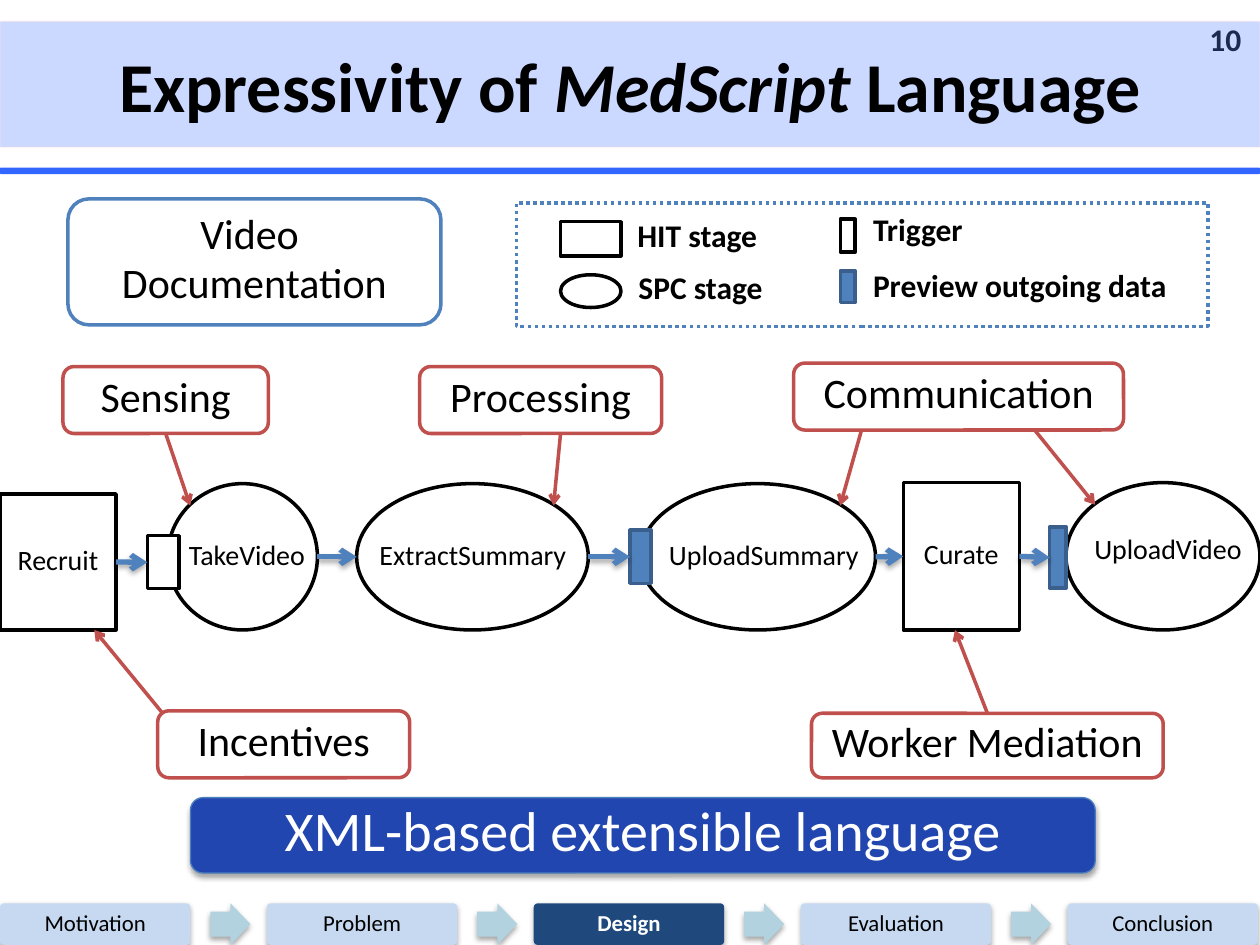
from dataclasses import dataclass
from typing import NamedTuple, Optional, Union

from lxml import etree
from pptx import Presentation
from pptx import util as u
from pptx.dml.color import RGBColor
from pptx.enum import dml, shapes, text
from pptx.oxml import ns

Geo = shapes.MSO_SHAPE
Align = text.PP_ALIGN


@dataclass(frozen=True)
class Theme:
    font: str = "Calibri"
    black: str = "000000"
    white: str = "FFFFFF"
    number: str = "161616"
    rule: str = "3366FF"
    title_edge: str = "FFE4E5"
    blue: str = "4F81BD"
    blue_edge: str = "3A5F8C"
    red: str = "C0504D"
    banner: str = "2246B0"
    banner_edge: str = "4B7EBC"
    step: str = "C6D9F1"
    step_active: str = "1F497D"
    step_arrow: str = "B2D2DF"
    title_pt: int = 40
    banner_pt: int = 32
    callout_pt: int = 24
    legend_pt: int = 18
    stage_pt: int = 16
    step_pt: int = 13


class Box(NamedTuple):
    x: float
    y: float
    w: float
    h: float


class Run(NamedTuple):
    text: str
    bold: bool = False
    italic: bool = False


class Stage(NamedTuple):
    name: str
    geo: Geo
    box: Box
    label: Optional[Box] = None


class Side(NamedTuple):
    name: str
    index: int


class Rim(NamedTuple):
    name: str
    fx: float
    fy: float


class Point(NamedTuple):
    x: float
    y: float


End = Union[Side, Rim, Point]


class Link(NamedTuple):
    start: End
    end: End


T = Theme()
STAGES = [
    Stage("Recruit", Geo.RECTANGLE, Box(0, 9.96, 2.34, 2.74)),
    Stage("Curate", Geo.RECTANGLE, Box(18.21, 9.73, 2.34, 2.97)),
    Stage("TakeVideo", Geo.OVAL, Box(3.38, 9.75, 3.02, 2.95), Box(3.38, 10.74, 3.2, 0.99)),
    Stage("ExtractSummary", Geo.OVAL, Box(7.19, 9.75, 4.67, 2.95), Box(6.98, 10.74, 5.11, 0.99)),
    Stage("UploadSummary", Geo.OVAL, Box(12.9, 9.75, 4.75, 2.95), Box(12.9, 10.74, 5, 0.99)),
    Stage("UploadVideo", Geo.OVAL, Box(21.49, 9.73, 3.91, 2.97), Box(21.49, 10.62, 4.11, 0.99)),
]
CALLOUTS = {
    "Sensing": Box(1.27, 7.39, 4.14, 1.35),
    "Processing": Box(8.46, 7.39, 4.88, 1.35),
    "Communication": Box(16, 7.32, 6.65, 1.35),
    "Incentives": Box(3.18, 14.33, 5.08, 1.35),
    "Worker Mediation": Box(16.36, 14.38, 7.09, 1.3),
}
GATES = {
    "take trigger": (Box(2.97, 10.8, 0.64, 1.07), T.white, T.black),
    "summary preview": (Box(12.7, 10.69, 0.43, 1.07), T.blue, T.blue_edge),
    "video preview": (Box(21.16, 10.62, 0.33, 1.24), T.blue, T.blue_edge),
}
FLOW = [
    Link(Side("Recruit", 3), Side("take trigger", 1)),
    Link(Rim("TakeVideo", 1, 0.5), Rim("ExtractSummary", 0, 0.5)),
    Link(Rim("ExtractSummary", 1, 0.5), Side("summary preview", 1)),
    Link(Rim("UploadSummary", 1, 0.5), Side("Curate", 1)),
    Link(Side("Curate", 3), Side("video preview", 1)),
]
POINTERS = [
    Link(Side("Sensing", 2), Rim("TakeVideo", 0.15, 0.15)),
    Link(Point(11.3, 8.74), Rim("ExtractSummary", 0.85, 0.15)),
    Link(Point(17.37, 8.66), Rim("UploadSummary", 0.85, 0.15)),
    Link(Point(20.85, 8.66), Rim("UploadVideo", 0.15, 0.15)),
    Link(Point(3.28, 14.38), Point(1.9, 12.7)),
    Link(Side("Worker Mediation", 0), Point(19.25, 12.7)),
]
LEGEND = [
    ("HIT stage", Geo.RECTANGLE, Box(11.3, 4.47, 1.22, 0.69), T.white, T.black, Box(12.6, 4.45, 3.07, 0.71)),
    ("SPC stage", Geo.OVAL, Box(11.3, 5.54, 1.22, 0.66), T.white, T.black, Box(12.62, 5.51, 3.05, 0.71)),
    ("Trigger", Geo.RECTANGLE, Box(16.94, 4.42, 0.3, 0.66), T.white, T.black, Box(17.35, 4.34, 2.79, 0.71)),
    ("Preview outgoing data", Geo.RECTANGLE, Box(16.94, 5.46, 0.3, 0.64), T.blue, T.blue_edge,
     Box(17.35, 5.49, 7.29, 0.66)),
]
STEPS = ["Motivation", "Problem", "Design", "Evaluation", "Conclusion"]
STEP_PITCH = 5.38


def rgb(color: str) -> RGBColor:
    return RGBColor.from_string(color)


def emu(box: Box) -> list:
    return [u.Cm(v) for v in box]


def set_alpha(parent, percent: int) -> None:
    clr = next(parent.iter(ns.qn("a:srgbClr")))
    etree.SubElement(clr, ns.qn("a:alpha"), val=str(percent * 1000))


def add_shadow(effects) -> None:
    outer = etree.SubElement(effects, ns.qn("a:outerShdw"), blurRad="40000", dist="23000",
                             dir="5400000", rotWithShape="0")
    etree.SubElement(outer, ns.qn("a:srgbClr"), val=T.black)
    set_alpha(outer, 35)


def write(sp, paragraphs: list, size: int, color: str = T.black, align=Align.CENTER,
          spacing: float = 0.8, before: float = 0.2) -> None:
    tf = sp.text_frame
    tf.word_wrap = True
    tf.vertical_anchor = text.MSO_ANCHOR.MIDDLE
    for i, runs in enumerate(paragraphs):
        p = tf.add_paragraph() if i else tf.paragraphs[0]
        p.alignment = align
        p.line_spacing = spacing
        p.space_before = u.Pt(size * before)
        for run in runs:
            r = p.add_run()
            r.text = run.text
            r.font.name, r.font.size = T.font, u.Pt(size)
            r.font.bold, r.font.italic = run.bold, run.italic
            r.font.color.rgb = rgb(color)


def add_shape(s, geo: Geo, box: Box, fill: str, line: Optional[str] = None,
              width: float = 2, shadow: bool = False):
    sp = s.shapes.add_shape(geo, *emu(box))
    sp.shadow.inherit = False
    sp.fill.solid()
    sp.fill.fore_color.rgb = rgb(fill)
    if line:
        sp.line.color.rgb = rgb(line)
        sp.line.width = u.Pt(width)
    else:
        sp.line.fill.background()
    if shadow:
        add_shadow(sp._element.spPr.find(ns.qn("a:effectLst")))
    return sp


def add_label(s, box: Box, run: Run, size: int, color: str = T.black, align=Align.CENTER) -> None:
    write(s.shapes.add_textbox(*emu(box)), [[run]], size, color, align)


def locate(end: End, nodes: dict) -> tuple:
    if isinstance(end, Point):
        return u.Cm(end.x), u.Cm(end.y)
    node = nodes[end.name]
    if isinstance(end, Rim):
        fx, fy = end.fx, end.fy
    else:
        fx, fy = [(0.5, 0), (0, 0.5), (0.5, 1), (1, 0.5)][end.index]
    return int(node.left + node.width * fx), int(node.top + node.height * fy)


def add_link(s, link: Link, nodes: dict, color: str, width: float, shadow: bool = False) -> None:
    c = s.shapes.add_connector(shapes.MSO_CONNECTOR.STRAIGHT, *locate(link.start, nodes),
                               *locate(link.end, nodes))
    for end, join in ((link.start, c.begin_connect), (link.end, c.end_connect)):
        if isinstance(end, Side):
            join(nodes[end.name], end.index)
    c.line.color.rgb = rgb(color)
    c.line.width = u.Pt(width)
    etree.SubElement(c.line._get_or_add_ln(), ns.qn("a:tailEnd"), type="arrow")
    effects = etree.SubElement(c._element.spPr, ns.qn("a:effectLst"))
    if shadow:
        add_shadow(effects)


def add_header(s) -> None:
    add_shape(s, Geo.ROUNDED_RECTANGLE, Box(0, 3.38, 25.4, 0.13), T.rule)
    add_label(s, Box(24.13, 0.43, 1.27, 0.84), Run("10", True), T.legend_pt, T.number, Align.LEFT)
    sp = add_shape(s, Geo.RECTANGLE, Box(0, 0.43, 25.4, 2.54), T.rule, T.title_edge, 1)
    set_alpha(sp._element.spPr.find(ns.qn("a:solidFill")), 25)
    set_alpha(sp._element.spPr.find(ns.qn("a:ln")), 30)
    write(sp, [[Run("Expressivity of ", True), Run("MedScript", True, True), Run(" Language", True)]],
          T.title_pt, spacing=1)


def add_legend(s) -> None:
    frame = add_shape(s, Geo.RECTANGLE, Box(10.41, 4.09, 13.94, 2.49), T.white, T.blue)
    frame.line.dash_style = dml.MSO_LINE.ROUND_DOT
    for name, geo, box, fill, line, label in LEGEND:
        add_shape(s, geo, box, fill, line)
        add_label(s, label, Run(name, True), T.legend_pt, align=Align.LEFT)


def add_workflow(s) -> None:
    nodes = {}
    for stage in STAGES:
        sp = nodes[stage.name] = add_shape(s, stage.geo, stage.box, T.white, T.black)
        if not stage.label:
            write(sp, [[Run(stage.name)]], T.stage_pt)
    for name, (box, fill, line) in GATES.items():
        nodes[name] = add_shape(s, Geo.RECTANGLE, box, fill, line)
    for stage in STAGES:
        if stage.label:
            add_label(s, stage.label, Run(stage.name), T.stage_pt)
    for name, box in CALLOUTS.items():
        nodes[name] = add_shape(s, Geo.ROUNDED_RECTANGLE, box, T.white, T.red)
        write(nodes[name], [[Run(name)]], T.callout_pt)
    for link in FLOW:
        add_link(s, link, nodes, T.blue, 3, True)
    for link in POINTERS:
        add_link(s, link, nodes, T.red, 2)


def add_steps(s, active: str) -> None:
    for i, name in enumerate(STEPS):
        x, on = i * STEP_PITCH, name == active
        sp = add_shape(s, Geo.ROUNDED_RECTANGLE, Box(x, 18.21, 3.84, 0.84),
                       T.step_active if on else T.step, shadow=True)
        sp.adjustments[0] = 0.1
        write(sp, [[Run(name, on)]], T.step_pt, T.white if on else T.black, spacing=0.9, before=0)
        if i < len(STEPS) - 1:
            arrow = add_shape(s, Geo.RIGHT_ARROW, Box(x + 4.24, 18.21, 0.81, 0.84), T.step_arrow, shadow=True)
            arrow.adjustments[0] = 0.6


def main() -> None:
    prs = Presentation()
    prs.slide_width, prs.slide_height = u.Cm(25.4), u.Cm(19.05)
    s = prs.slides.add_slide(prs.slide_layouts[6])
    add_header(s)
    add_legend(s)
    topic = add_shape(s, Geo.ROUNDED_RECTANGLE, Box(1.37, 4.01, 7.52, 2.54), T.white, T.blue)
    write(topic, [[Run("Video ")], [Run("Documentation")]], T.callout_pt)
    add_workflow(s)
    banner = add_shape(s, Geo.ROUNDED_RECTANGLE, Box(3.84, 16.08, 18.24, 1.52), T.banner,
                       T.banner_edge, 0.75, True)
    write(banner, [[Run("XML-based extensible language")]], T.banner_pt, T.white)
    add_steps(s, "Design")
    prs.save("out.pptx")


if __name__ == "__main__":
    main()
